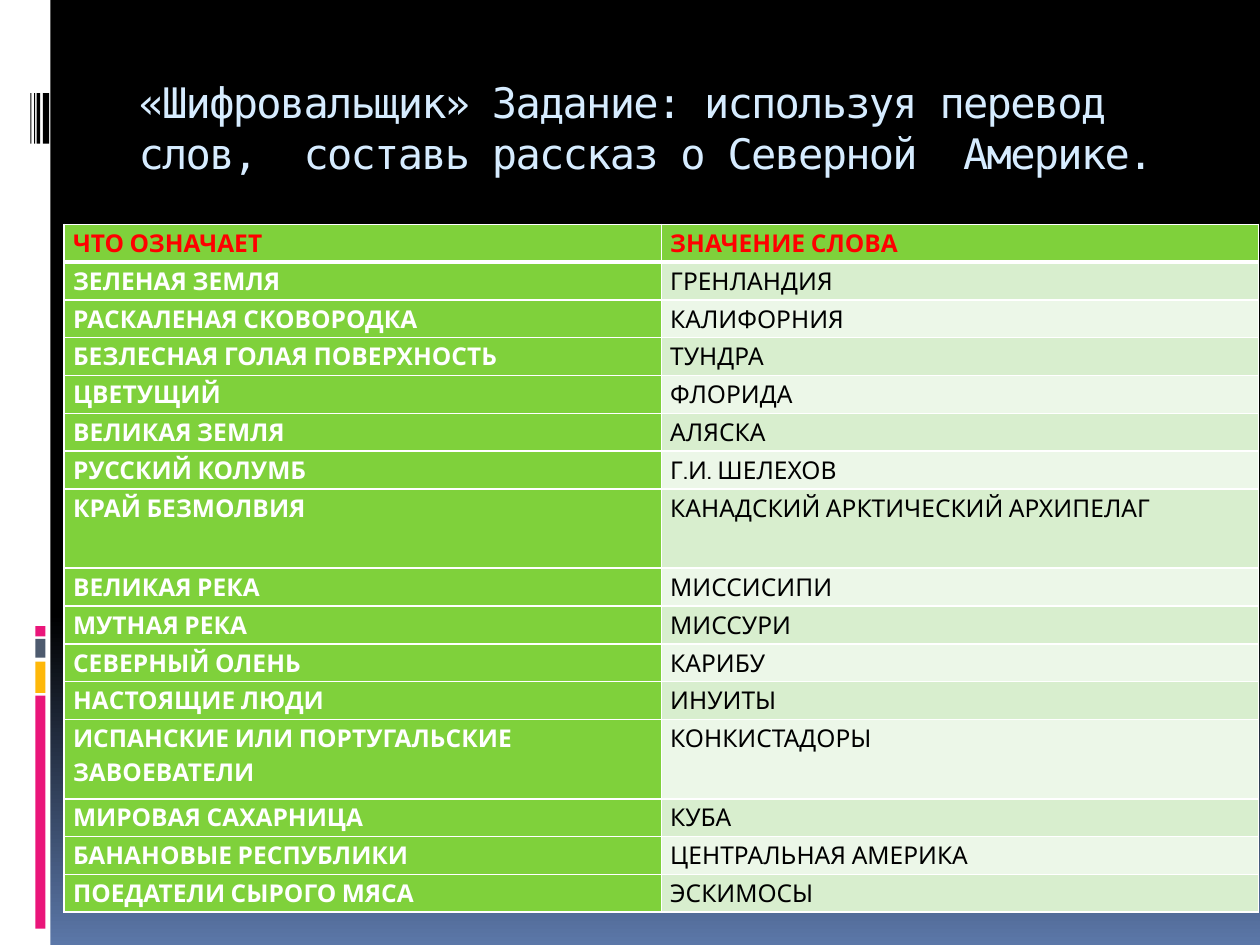
from lxml.etree import SubElement
from pptx import Presentation
from pptx.dml.color import RGBColor
from pptx.enum.shapes import MSO_SHAPE as Shape
from pptx.enum.text import MSO_ANCHOR as Anchor, PP_ALIGN as Align
from pptx.oxml.ns import qn
from pptx.util import Inches, Pt

TITLE = "«Шифровальщик» Задание: используя перевод слов,  составь рассказ о Северной  Америке."
WORDS = [
    ("ЧТО ОЗНАЧАЕТ", "ЗНАЧЕНИЕ СЛОВА"),
    ("ЗЕЛЕНАЯ ЗЕМЛЯ", "ГРЕНЛАНДИЯ"),
    ("РАСКАЛЕНАЯ СКОВОРОДКА", "КАЛИФОРНИЯ"),
    ("БЕЗЛЕСНАЯ ГОЛАЯ ПОВЕРХНОСТЬ", "ТУНДРА"),
    ("ЦВЕТУЩИЙ", "ФЛОРИДА"),
    ("ВЕЛИКАЯ ЗЕМЛЯ", "АЛЯСКА"),
    ("РУССКИЙ КОЛУМБ", "Г.И. ШЕЛЕХОВ"),
    ("КРАЙ БЕЗМОЛВИЯ", "КАНАДСКИЙ АРКТИЧЕСКИЙ АРХИПЕЛАГ"),
    ("ВЕЛИКАЯ РЕКА", "МИССИСИПИ"),
    ("МУТНАЯ РЕКА", "МИССУРИ"),
    ("СЕВЕРНЫЙ ОЛЕНЬ", "КАРИБУ"),
    ("НАСТОЯЩИЕ ЛЮДИ", "ИНУИТЫ"),
    ("ИСПАНСКИЕ ИЛИ ПОРТУГАЛЬСКИЕ ЗАВОЕВАТЕЛИ", "КОНКИСТАДОРЫ"),
    ("МИРОВАЯ САХАРНИЦА", "КУБА"),
    ("БАНАНОВЫЕ РЕСПУБЛИКИ", "ЦЕНТРАЛЬНАЯ АМЕРИКА"),
    ("ПОЕДАТЕЛИ СЫРОГО МЯСА", "ЭСКИМОСЫ"),
]
TALL_ROWS = {7, 12}
GREEN, BANDS = "7FD13B", ("ECF7E8", "D8EECE")
ACCENTS = [(5.52, 1.85, "EA157A"), (5.25, 0.25, "FEB80A"),
           (5.07, 0.15, "4E5B6F"), (4.97, 0.08, "EA157A")]
STRIPES = [(0.34, 0.05), (0.29, 0.03), (0.27, 0.01), (0.24, 0.01)]


def rgb(value):
    """Turn a hex string into a colour."""
    return RGBColor.from_string(value)


def apply(obj, **values):
    """Set attributes from format values."""
    for name, value in values.items():
        setattr(obj, name, value)


def set_font(font, color, **values):
    """Set font attributes and colour."""
    apply(font, **values)
    font.color.rgb = rgb(color)


def paint_background(s):
    """Fill the slide with black fading to blue at the foot."""
    fill = s.background.fill
    fill.gradient()
    fill.gradient_angle = 270
    for stop, (position, color) in zip(fill.gradient_stops, [(0.65, "000000"), (1, "5B77A8")]):
        stop.position = position
        stop.color.rgb = rgb(color)


def add_bar(s, left, top, width, height, color):
    """Add a plain filled rectangle."""
    sp = s.shapes.add_shape(Shape.RECTANGLE, *map(Inches, (left, top, width, height)))
    sp.shadow.inherit = False
    sp.fill.solid()
    sp.fill.fore_color.rgb = rgb(color)
    sp.line.fill.background()


def add_side_strip(s):
    """Add the white strip with its coloured bars and stripes."""
    add_bar(s, 0, 0, 0.4, 7.5, "FFFFFF")
    for top, height, color in ACCENTS:
        add_bar(s, 0.28, top, 0.08, height, color)
    for left, width in STRIPES:
        add_bar(s, left, 0.74, width, 0.4, "000000")


def format_title(s):
    """Place and format the title above the side strip."""
    sp = s.shapes.title
    s.shapes._spTree.append(sp._element)
    apply(sp, left=Inches(1), top=Inches(0.56), width=Inches(8.5), height=Inches(1))
    tf = sp.text_frame
    apply(tf, word_wrap=True, vertical_anchor=Anchor.TOP)
    p = tf.paragraphs[0]
    p.alignment = Align.LEFT
    r = p.add_run()
    r.text = TITLE
    set_font(r.font, "D6ECFF", name="DejaVu Sans Mono", size=Pt(24), bold=False)
    r._r.get_or_add_rPr().set("spc", "-100")


def add_borders(cell, **widths):
    """Draw white borders of the given point widths."""
    tc_pr = cell._tc.get_or_add_tcPr()
    for side in "LRTB":
        ln = SubElement(tc_pr, qn(f"a:ln{side}"), w=str(Pt(widths.get(side, 1))))
        SubElement(SubElement(ln, qn("a:solidFill")), qn("a:srgbClr"), val="FFFFFF")


def format_cell(cell, text, fill, color, bold, **borders):
    """Write one cell with its fill, font and borders."""
    apply(cell, margin_left=Inches(0.07), margin_right=Inches(0.07),
          margin_top=0, margin_bottom=0)
    add_borders(cell, **borders)
    cell.fill.solid()
    cell.fill.fore_color.rgb = rgb(fill)
    p = cell.text_frame.paragraphs[0]
    p.line_spacing = 1.15
    r = p.add_run()
    r.text = text
    set_font(r.font, color, name="Cabin", size=Pt(14), bold=bold)


def add_word_table(s):
    """Add the table of meanings and words."""
    table = s.shapes.add_table(len(WORDS), 2, *map(Inches, (0.51, 1.78, 9.48, 5.51))).table
    for i, words in enumerate(WORDS):
        table.rows[i].height = Inches(0.63 if i in TALL_ROWS else 0.3)
        borders = {0: {"B": 3}, 1: {"T": 3}}.get(i, {})
        for j, text in enumerate(words):
            header, first = i == 0, j == 0
            fill = GREEN if header or first else BANDS[i % 2]
            color = "FF0000" if header else "FFFFFF" if first else "000000"
            format_cell(table.cell(i, j), text, fill, color, header or first, **borders)


def main():
    """Build and save the slide."""
    prs = Presentation()
    apply(prs, slide_width=Inches(10), slide_height=Inches(7.5))
    s = prs.slides.add_slide(prs.slide_layouts[5])
    paint_background(s)
    add_side_strip(s)
    format_title(s)
    add_word_table(s)
    prs.save("out.pptx")


if __name__ == "__main__":
    main()
